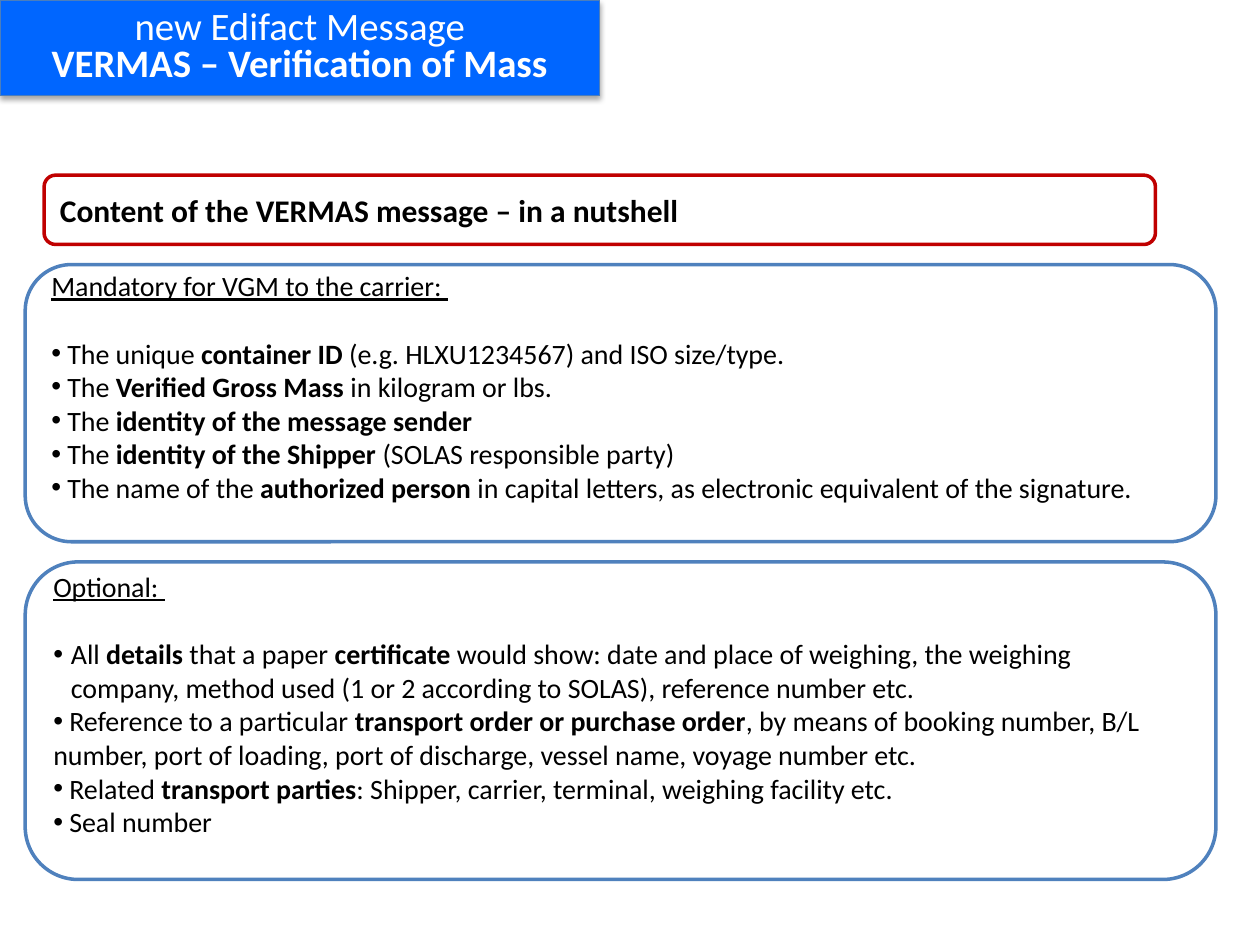
from dataclasses import dataclass

import lxml.etree
import pptx
import pptx.dml.color
import pptx.enum.shapes
import pptx.enum.text
import pptx.oxml.ns
import pptx.util
from pptx.util import Inches

Color = pptx.dml.color.RGBColor
Align = pptx.enum.text.PP_ALIGN
qn = pptx.oxml.ns.qn


@dataclass(frozen=True)
class Theme:
    font: str = "Calibri"
    ink: str = "000000"
    paper: str = "FFFFFF"
    banner: str = "0066FF"
    banner_edge: str = "4B7EBC"
    panel_edge: str = "4F81BD"
    accent: str = "C00000"
    title_size: float = 22.2
    headline_size: float = 18
    body_size: float = 16
    blank_line: float = 19.5


@dataclass(frozen=True)
class Frame:
    left: float
    top: float
    width: float
    height: float
    fill: str
    edge: str
    edge_width: float = 2


@dataclass(frozen=True)
class Span:
    text: str
    bold: bool = False


@dataclass(frozen=True)
class Item:
    spans: tuple[Span, ...]
    hang: float = 0


@dataclass(frozen=True)
class Panel:
    frame: Frame
    heading: str
    items: tuple[Item, ...]


THEME = Theme()
BANNER = Frame(0, 0, 4.76, 0.76, THEME.banner, THEME.banner_edge, 0.75)
HEADLINE = Frame(0.35, 1.39, 8.82, 0.55, THEME.paper, THEME.accent)


def strong(text: str) -> Span:
    return Span(text, True)


PANELS = (
    Panel(
        Frame(0.2, 2.1, 9.45, 2.2, THEME.paper, THEME.panel_edge),
        "Mandatory for VGM to the carrier: ",
        (
            Item((Span(" The unique "), strong("container ID "),
                  Span("(e.g. HLXU1234567) and ISO size/type."))),
            Item((Span(" The "), strong("Verified Gross Mass "),
                  Span("in kilogram or lbs."))),
            Item((Span(" The "), strong("identity of the message sender"))),
            Item((Span(" The "), strong("identity of the Shipper "),
                  Span("(SOLAS responsible party)"))),
            Item((Span(" The name of the "), strong("authorized person "),
                  Span("in capital letters, as electronic equivalent of the signature."))),
        ),
    ),
    Panel(
        Frame(0.2, 4.46, 9.45, 2.52, THEME.paper, THEME.panel_edge),
        "Optional: ",
        (
            Item((Span("All "), strong("details"), Span(" that a paper "),
                  strong("certificate"),
                  Span(" would show: date and place of weighing, the weighing \n"
                       "company, method used (1 or 2 according to SOLAS), "
                       "reference number etc.")), hang=0.14),
            Item((Span(" Reference to a particular "),
                  strong("transport order or purchase order"),
                  Span(", by means of booking number, B/L number, port of loading, "
                       "port of discharge, vessel name, voyage number etc."))),
            Item((Span(" Related "), strong("transport parties"),
                  Span(": Shipper, carrier, terminal, weighing facility etc."))),
            Item((Span(" Seal number"),)),
        ),
    ),
)


def apply(target, values: dict) -> None:
    for name, value in values.items():
        setattr(target, name, value)


def style_box(box, frame: Frame) -> None:
    apply(box, {side: Inches(getattr(frame, side))
                for side in ("left", "top", "width", "height")})
    box.fill.solid()
    box.fill.fore_color.rgb = Color.from_string(frame.fill)
    box.line.color.rgb = Color.from_string(frame.edge)
    box.line.width = pptx.util.Pt(frame.edge_width)
    box.shadow.inherit = False
    apply(box.text_frame, {
        "word_wrap": True,
        "auto_size": pptx.enum.text.MSO_AUTO_SIZE.NONE,
        "vertical_anchor": pptx.enum.text.MSO_ANCHOR.MIDDLE,
    })


def add_span(para, span: Span, size: float, color: str, underline: bool = False) -> None:
    for number, line in enumerate(span.text.split("\n")):
        if number:
            para.add_line_break()
        run = para.add_run()
        run.text = line
        apply(run.font, {"name": THEME.font, "size": pptx.util.Pt(size),
                         "bold": span.bold, "underline": underline})
        run.font.color.rgb = Color.from_string(color)


def set_bullet(para, hang: float = 0, mark: str = "") -> None:
    properties = para._p.get_or_add_pPr()
    properties.set("marL", str(Inches(hang)))
    properties.set("indent", str(-Inches(hang)))
    if mark:
        lxml.etree.SubElement(properties, qn("a:buFont"), typeface="Arial")
        lxml.etree.SubElement(properties, qn("a:buChar"), char=mark)
    else:
        lxml.etree.SubElement(properties, qn("a:buNone"))


def round_corners(box) -> None:
    geometry = lxml.etree.SubElement(box._element.spPr, qn("a:prstGeom"), prst="roundRect")
    lxml.etree.SubElement(geometry, qn("a:avLst"))


def add_shadow(box) -> None:
    effects = box._element.spPr.find(qn("a:effectLst"))
    shadow = lxml.etree.SubElement(
        effects, qn("a:outerShdw"), blurRad=str(pptx.util.Pt(3.1)),
        dist=str(pptx.util.Pt(1.8)), dir="5400000", rotWithShape="0")
    color = lxml.etree.SubElement(shadow, qn("a:srgbClr"), val=THEME.ink)
    lxml.etree.SubElement(color, qn("a:alpha"), val="35000")


def draw_panel(box, panel: Panel) -> None:
    apply(box, {"left": Inches(panel.frame.left), "top": Inches(panel.frame.top)})
    round_corners(box)
    style_box(box, panel.frame)
    text = box.text_frame
    apply(text, {"margin_left": Inches(0.1), "margin_right": Inches(0.1),
                 "margin_top": Inches(0.05), "margin_bottom": Inches(0.32)})
    spacing = {"space_before": pptx.util.Pt(0), "alignment": Align.LEFT}
    heading = text.paragraphs[0]
    set_bullet(heading)
    apply(heading, spacing | {"space_after": pptx.util.Pt(THEME.blank_line)})
    add_span(heading, Span(panel.heading), THEME.body_size, THEME.ink, underline=True)
    for item in panel.items:
        para = text.add_paragraph()
        set_bullet(para, item.hang, "•")
        apply(para, spacing)
        for span in item.spans:
            add_span(para, span, THEME.body_size, THEME.ink)


def draw_banner(box) -> None:
    style_box(box, BANNER)
    add_shadow(box)
    para = box.text_frame.paragraphs[0]
    apply(para, {"alignment": Align.CENTER, "line_spacing": 0.8})
    for span in (Span("new Edifact Message\n"), strong("VERMAS – Verification of Mass")):
        add_span(para, span, THEME.title_size, THEME.paper)


def draw_headline(page) -> None:
    box = page.shapes.add_shape(
        pptx.enum.shapes.MSO_SHAPE.ROUNDED_RECTANGLE, 0, 0, 0, 0)
    style_box(box, HEADLINE)
    para = box.text_frame.paragraphs[0]
    para.alignment = Align.LEFT
    add_span(para, strong("Content of the VERMAS message – in a nutshell"),
             THEME.headline_size, THEME.ink)


def main() -> None:
    deck = pptx.Presentation()
    apply(deck, {"slide_width": Inches(10), "slide_height": Inches(7.5)})
    page = deck.slides.add_slide(deck.slide_layouts.get_by_name("Two Content"))
    title, *bodies = [box for box in page.placeholders]
    for box, panel in zip(bodies, PANELS):
        draw_panel(box, panel)
    draw_headline(page)
    draw_banner(title)
    deck.save("out.pptx")


if __name__ == "__main__":
    main()
